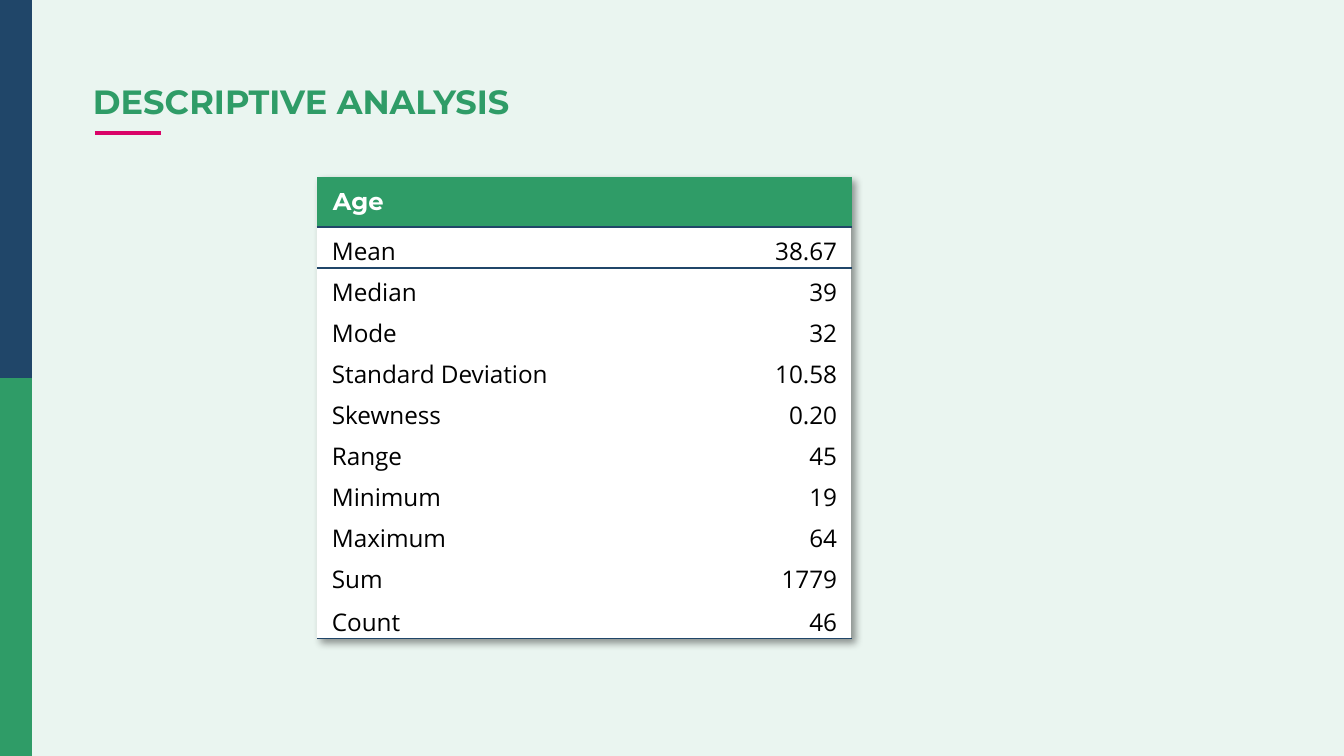
from lxml.etree import SubElement
from pptx import Presentation
from pptx.dml.color import RGBColor
from pptx.enum.shapes import MSO_CONNECTOR as Connector, MSO_SHAPE as Shape
from pptx.enum.text import MSO_ANCHOR as Anchor, PP_ALIGN as Align
from pptx.oxml import parse_xml
from pptx.oxml.ns import nsdecls, qn
from pptx.util import Pt

PX = 914400 * 10 // 1344  # slide is 1344 px wide
COLORS = {
    "background": "EAF5F0",
    "navy": "204669",
    "green": "2F9C67",
    "pink": "D90368",
    "white": "FFFFFF",
    "black": "000000",
}
NO_STYLE = "{2D5ABB26-0587-4C30-8999-92F81FD0307C}"
STATISTICS = [
    ("Mean", "38.67"),
    ("Median", "39"),
    ("Mode", "32"),
    ("Standard Deviation", "10.58"),
    ("Skewness", "0.20"),
    ("Range", "45"),
    ("Minimum", "19"),
    ("Maximum", "64"),
    ("Sum", "1779"),
    ("Count", "46"),
]


def px(*values):
    return [value * PX for value in values]


def color(name):
    return RGBColor.from_string(COLORS[name])


def format_text(para, font, size, color_name, bold=False, align=Align.LEFT):
    para.alignment = align
    for span in para.runs:
        span.font.name = font
        span.font.size = Pt(size)
        span.font.bold = bold
        span.font.color.rgb = color(color_name)


def add_rectangle(page, bounds, color_name):
    box = page.shapes.add_shape(Shape.RECTANGLE, *px(*bounds))
    box.shadow.inherit = False
    box.fill.solid()
    box.fill.fore_color.rgb = color(color_name)
    box.line.fill.background()
    return box


def add_shadow(box):
    effects = box._element.spPr.find(qn("a:effectLst"))
    effects.append(parse_xml(
        f'<a:outerShdw {nsdecls("a")} blurRad="{Pt(4)}" dist="{Pt(3)}" '
        f'dir="{45 * 60000}" algn="tl" rotWithShape="0">'
        f'<a:srgbClr val="{COLORS["black"]}"><a:alpha val="40000"/></a:srgbClr>'
        '</a:outerShdw>'))


def add_rule(page, ends, color_name, width):
    rule = page.shapes.add_connector(Connector.STRAIGHT, *px(*ends))
    rule.line.color.rgb = color(color_name)
    rule.line.width = Pt(width)
    SubElement(rule._element.spPr, qn("a:effectLst"))


def set_title(page, text, bounds):
    title = page.shapes.title
    title.left, title.top, title.width, title.height = px(*bounds)
    frame = title.text_frame
    frame.text = text
    frame.word_wrap = True
    frame.vertical_anchor = Anchor.MIDDLE
    frame.margin_left = 0
    para = frame.paragraphs[0]
    para.line_spacing = 0.9
    format_text(para, "Montserrat", 18, "green", bold=True)


def add_border(cell, side):
    cell._tc.get_or_add_tcPr().append(parse_xml(
        f'<a:{side} {nsdecls("a")} w="{Pt(1)}"><a:solidFill>'
        f'<a:srgbClr val="{COLORS["navy"]}"/></a:solidFill></a:{side}>'))


def set_margins(cell, side, vertical):
    cell.margin_left = cell.margin_right = side * PX
    cell.margin_top = cell.margin_bottom = vertical * PX


def fill_header(table, text):
    table.cell(0, 0).merge(table.cell(0, 1))
    for cell in table.rows[0].cells:
        add_border(cell, "lnB")
        cell.fill.solid()
        cell.fill.fore_color.rgb = color("green")
        cell.vertical_anchor = Anchor.MIDDLE
        set_margins(cell, 16, 8)
    header = table.cell(0, 0)
    header.text = text
    format_text(header.text_frame.paragraphs[0], "Montserrat", 13, "white", bold=True)


def fill_statistics(table, statistics):
    last = len(statistics)
    for row, pair in enumerate(statistics, start=1):
        for column, (text, align) in enumerate(zip(pair, (Align.LEFT, Align.RIGHT))):
            cell = table.cell(row, column)
            cell.text = text
            if row == 1:
                add_border(cell, "lnT")
            if row == last:
                add_border(cell, "lnB")
            cell.fill.background()
            cell.vertical_anchor = Anchor.BOTTOM
            set_margins(cell, 15, 0)
            format_text(cell.text_frame.paragraphs[0], "Open Sans", 13, "black", align=align)


def add_statistics_table(page, left, top, widths, heights):
    bounds = px(left, top, sum(widths), sum(heights))
    table = page.shapes.add_table(len(heights), len(widths), *bounds).table
    table.horz_banding = False
    table._tbl.tblPr.find(qn("a:tableStyleId")).text = NO_STYLE
    for column, width in zip(table.columns, widths):
        column.width = width * PX
    for row, height in zip(table.rows, heights):
        row.height = height * PX
    fill_header(table, "Age")
    fill_statistics(table, STATISTICS)


def main():
    deck = Presentation()
    deck.slide_width, deck.slide_height = px(1344, 756)
    page = deck.slides.add_slide(deck.slide_layouts[5])
    page.background.fill.solid()
    page.background.fill.fore_color.rgb = color("background")

    # Side bands and title
    for index, name in enumerate(("navy", "green")):
        add_rectangle(page, (0, index * 378, 32, 378), name)
    add_rule(page, (95, 133, 161, 133), "pink", 2.25)
    set_title(page, "DESCRIPTIVE ANALYSIS", (93, 79, 1158, 50))

    # Statistics table on a white card
    add_shadow(add_rectangle(page, (317, 177, 534, 462), "white"))
    heights = [50] + [41] * (len(STATISTICS) - 1) + [43]
    add_statistics_table(page, 317, 177, (410, 125), heights)

    deck.save("out.pptx")


if __name__ == "__main__":
    main()
